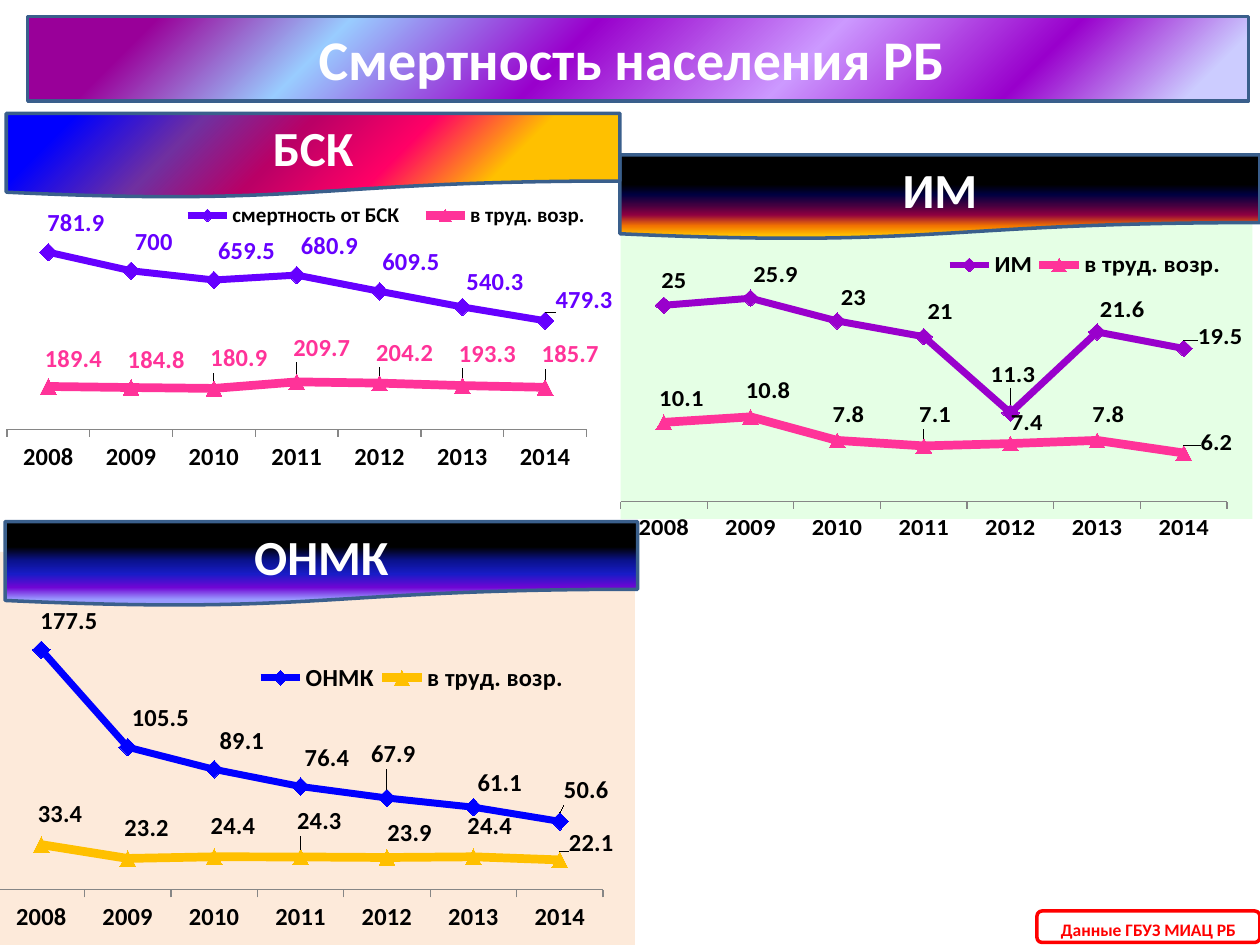
from lxml import etree
from pptx import Presentation
from pptx.chart.data import CategoryChartData
from pptx.dml.color import RGBColor
from pptx.enum.chart import (XL_CHART_TYPE, XL_LABEL_POSITION, XL_LEGEND_POSITION,
                             XL_MARKER_STYLE, XL_TICK_LABEL_POSITION, XL_TICK_MARK)
from pptx.enum.shapes import MSO_SHAPE
from pptx.enum.text import MSO_ANCHOR, MSO_AUTO_SIZE, PP_ALIGN
from pptx.oxml import parse_xml
from pptx.oxml.ns import nsdecls, qn
from pptx.util import Inches, Pt

LINE = XL_CHART_TYPE.LINE_MARKERS
ABOVE = XL_LABEL_POSITION.ABOVE
RIGHT = XL_LEGEND_POSITION.RIGHT
MARKS = ((XL_MARKER_STYLE.DIAMOND, 10, 4), (XL_MARKER_STYLE.TRIANGLE, 9, 5))
OUTSIDE, NO_TICK = XL_TICK_MARK.OUTSIDE, XL_TICK_MARK.NONE
LOW = XL_TICK_LABEL_POSITION.LOW
WAVE, ROUND = MSO_SHAPE.FLOWCHART_DOCUMENT, MSO_SHAPE.ROUNDED_RECTANGLE
MIDDLE, TOP = MSO_ANCHOR.MIDDLE, MSO_ANCHOR.TOP
CENTER = PP_ALIGN.CENTER
FIXED = MSO_AUTO_SIZE.NONE

FONT = "Calibri"
COLORS = {"white": "FFFFFF", "black": "000000", "red": "FF0000", "edge": "3A5F8C",
          "axis": "868686", "violet": "6600FF", "pink": "FF3399", "purple": "9900CC",
          "blue": "0000FF", "gold": "FFC000", "mint": "E5FFE5", "peach": "FDEADA"}
YEARS = [str(year) for year in range(2008, 2015)]
WORK = "в труд. возр."

TITLE = ((10, "990099"), (25, "99CCFF"), (44, "9900CC"),
         (63, "CC99FF"), (81, "9900CC"), (95, "CCCCFF"))
RAINBOW = ((10, "0000FF"), (29, "7030A0"), (45, "BA0066"), (62, "FF0066"), (79, "FFC000"))
FIRE = ((35, "000000"), (47, "000040"), (59, "400040"),
        (71, "8F0040"), (84, "F27300"), (95, "FFBF00"))
NIGHT = ((30, "000000"), (46, "0A128C"), (62, "181CC7"), (78, "7005D4"), (92, "9999FF"))


def rgb(name):
    """Return the colour with this name."""
    return RGBColor.from_string(COLORS[name])


def style(font, size, color="black"):
    """Format a font as bold in one size and colour."""
    font.name, font.size, font.bold = FONT, Pt(size), True
    font.color.rgb = rgb(color)


def write(shape, text, size=28, color="white", anchor=MIDDLE):
    """Put centred text into a shape."""
    frame = shape.text_frame
    frame.word_wrap, frame.auto_size = True, FIXED
    frame.vertical_anchor = anchor
    para = frame.paragraphs[0]
    para.alignment = CENTER
    run = para.add_run()
    run.text = text
    style(run.font, size, color)


def edge(shape, color):
    """Draw a two-point outline."""
    shape.line.color.rgb = rgb(color)
    shape.line.width = Pt(2)


def blend(shape, stops, angle):
    """Fill a shape with a linear gradient."""
    shape.fill.gradient()
    shape.fill.gradient_angle = 360 - angle
    items = shape._element.spPr.find(".//" + qn("a:gsLst"))
    for item in list(items):
        items.remove(item)
    for pos, color in stops:
        stop = etree.SubElement(items, qn("a:gs"), pos=str(pos * 1000))
        etree.SubElement(stop, qn("a:srgbClr"), val=color)


def banner(slide, box, text, stops, angle):
    """Add a wavy heading."""
    shape = slide.shapes.add_shape(WAVE, *map(Inches, box))
    shape.shadow.inherit = False
    blend(shape, stops, angle)
    edge(shape, "edge")
    write(shape, text)


def head(slide, box, text):
    """Shape the title as a wavy heading."""
    title = slide.shapes.title
    title.left, title.top, title.width, title.height = map(Inches, box)
    title._element.spPr.append(parse_xml(
        f'<a:prstGeom {nsdecls("a")} prst="flowChartDocument"><a:avLst/></a:prstGeom>'))
    blend(title, TITLE, 45)
    edge(title, "edge")
    write(title, text, size=32)


def place(parent, index, inner=False, **spots):
    """Give a chart part a manual layout."""
    old = parent.find(qn("c:layout"))
    if old is not None:
        parent.remove(old)
    layout = etree.Element(qn("c:layout"))
    manual = etree.SubElement(layout, qn("c:manualLayout"))
    if inner:
        etree.SubElement(manual, qn("c:layoutTarget"), val="inner")
    if "w" in spots:
        for mode in ("c:xMode", "c:yMode"):
            etree.SubElement(manual, qn(mode), val="edge")
    for key, value in spots.items():
        etree.SubElement(manual, qn("c:" + key), val=f"{value:.4f}")
    parent.insert(index, layout)


def trace(series, color, mark, shifts, size, ink):
    """Format one line and shift its labels by inches."""
    sign, width, weight = mark
    series.smooth = False
    series.format.line.color.rgb = rgb(color)
    series.format.line.width = Pt(weight)
    series.marker.style, series.marker.size = sign, width
    series.marker.format.fill.solid()
    series.marker.format.fill.fore_color.rgb = rgb(color)
    series.marker.format.line.color.rgb = rgb(color)
    for index in range(len(shifts)):
        label = series.points[index].data_label
        style(label.font, 14, ink)
        label.position = ABOVE
    labels = series._element.findall(qn("c:dLbls") + "/" + qn("c:dLbl"))
    for label, (x, y) in zip(labels, shifts):
        place(label, 1, x=x / size[0], y=y / size[1])


def graph(slide, box, top, plot, key, rows, fill=None, small=14, tint=False):
    """Add a two-line chart."""
    data = CategoryChartData()
    data.categories = YEARS
    for name, _, values, _ in rows:
        data.add_series(name, values)
    chart = slide.shapes.add_chart(LINE, *map(Inches, box), data).chart
    chart.has_title = False
    chart.font.name, chart.font.size = FONT, Pt(18)
    chart.has_legend = True
    chart.legend.position = RIGHT
    chart.legend.include_in_layout = False
    style(chart.legend.font, small)
    place(chart.legend._element, 1, **dict(zip("xywh", key)))
    place(chart._chartSpace.chart.plotArea, 0, inner=True, **dict(zip("xywh", plot)))
    paint = (f'<a:solidFill><a:srgbClr val="{COLORS[fill]}"/></a:solidFill>'
             if fill else "<a:noFill/>")
    chart._chartSpace.chart.addnext(parse_xml(
        f'<c:spPr {nsdecls("c", "a")}>{paint}<a:ln><a:noFill/></a:ln></c:spPr>'))
    scale, years = chart.value_axis, chart.category_axis
    scale.minimum_scale, scale.maximum_scale = 0, top
    scale.has_major_gridlines = scale.visible = False
    years.major_tick_mark, years.minor_tick_mark = OUTSIDE, NO_TICK
    years.tick_label_position = LOW
    style(years.tick_labels.font, 14)
    years.format.line.color.rgb = rgb("axis")
    chart.plots[0].vary_by_categories = False
    for series, row, mark in zip(chart.plots[0].series, rows, MARKS):
        trace(series, row[1], mark, row[3], box[2:], row[1] if tint else "black")


def source(slide, box, text):
    """Add the framed source note."""
    shape = slide.shapes.add_shape(ROUND, *map(Inches, box))
    shape.shadow.inherit = False
    shape.fill.solid()
    shape.fill.fore_color.rgb = rgb("white")
    edge(shape, "red")
    write(shape, text, size=10, color="red", anchor=TOP)


def main():
    """Build the slide and save it."""
    deck = Presentation()
    deck.slide_width, deck.slide_height = Inches(10), Inches(7.5)
    slide = deck.slides.add_slide(deck.slide_layouts[5])
    head(slide, (0.22, 0.13, 9.69, 0.67), "Смертность населения РБ ")
    graph(slide, (0.05, 1.02, 4.9, 2.95), 1000, (0, 0.2, 0.94, 0.61), (0.27, 0.2, 0.69, 0.06), (
        ("смертность от БСК ", "violet", (781.9, 700, 659.5, 680.9, 609.5, 540.3, 479.3),
         ((0.22, 0), (0.18, 0), (0.26, 0), (0.26, 0), (0.25, 0), (0.26, 0.03), (0.31, 0.06))),
        (WORK, "pink", (189.4, 184.8, 180.9, 209.7, 204.2, 193.3, 185.7),
         ((0.2, 0), (0.2, 0), (0.2, -0.02), (0.2, -0.05), (0.2, -0.02), (0.2, -0.03),
          (0.2, -0.04)))), small=12, tint=True)
    graph(slide, (4.92, 1.39, 5.02, 2.91), 35, (0, 0.15, 0.96, 0.8), (0.51, 0.22, 0.45, 0.08), (
        ("ИМ", "purple", (25, 25.9, 23, 21, 11.3, 21.6, 19.5),
         ((0.08, 0.02), (0.2, 0.03), (0.13, 0.03), (0.13, 0.02), (0.02, -0.1), (0.2, 0.04),
          (0.29, 0.13))),
        (WORK, "pink", (10.1, 10.8, 7.8, 7.1, 7.4, 7.8, 6.2),
         ((0.14, 0.02), (0.14, 0), (0.09, 0), (0.09, -0.04), (0.13, 0.04), (0.09, 0),
          (0.26, 0.13)))), fill="mint")
    banner(slide, (4.92, 1.23, 5.08, 0.67), "ИМ", FIRE, 90)
    graph(slide, (-0.02, 4.38, 5.06, 3.12), 250, (0, 0, 0.95, 0.86), (0.4, 0.28, 0.5, 0.08), (
        ("ОНМК", "blue", (177.5, 105.5, 89.1, 76.4, 67.9, 61.1, 50.6),
         ((0.22, 0), (0.26, 0), (0.22, 0), (0.21, 0), (0.05, -0.12), (0.21, 0.04),
          (0.21, -0.02))),
        (WORK, "gold", (33.4, 23.2, 24.4, 24.3, 23.9, 24.4, 22.1),
         ((0.15, -0.02), (0.15, -0.02), (0.15, -0.02), (0.15, -0.06), (0.18, 0.03),
          (0.13, -0.02), (0.25, 0.09)))), fill="peach")
    banner(slide, (0.04, 4.14, 5.02, 0.67), "ОНМК", NIGHT, 90)
    source(slide, (8.23, 7.23, 1.77, 0.25), "Данные ГБУЗ МИАЦ РБ")
    banner(slide, (0.05, 0.9, 4.87, 0.67), "БСК", RAINBOW, 45)
    deck.save("out.pptx")


if __name__ == "__main__":
    main()
